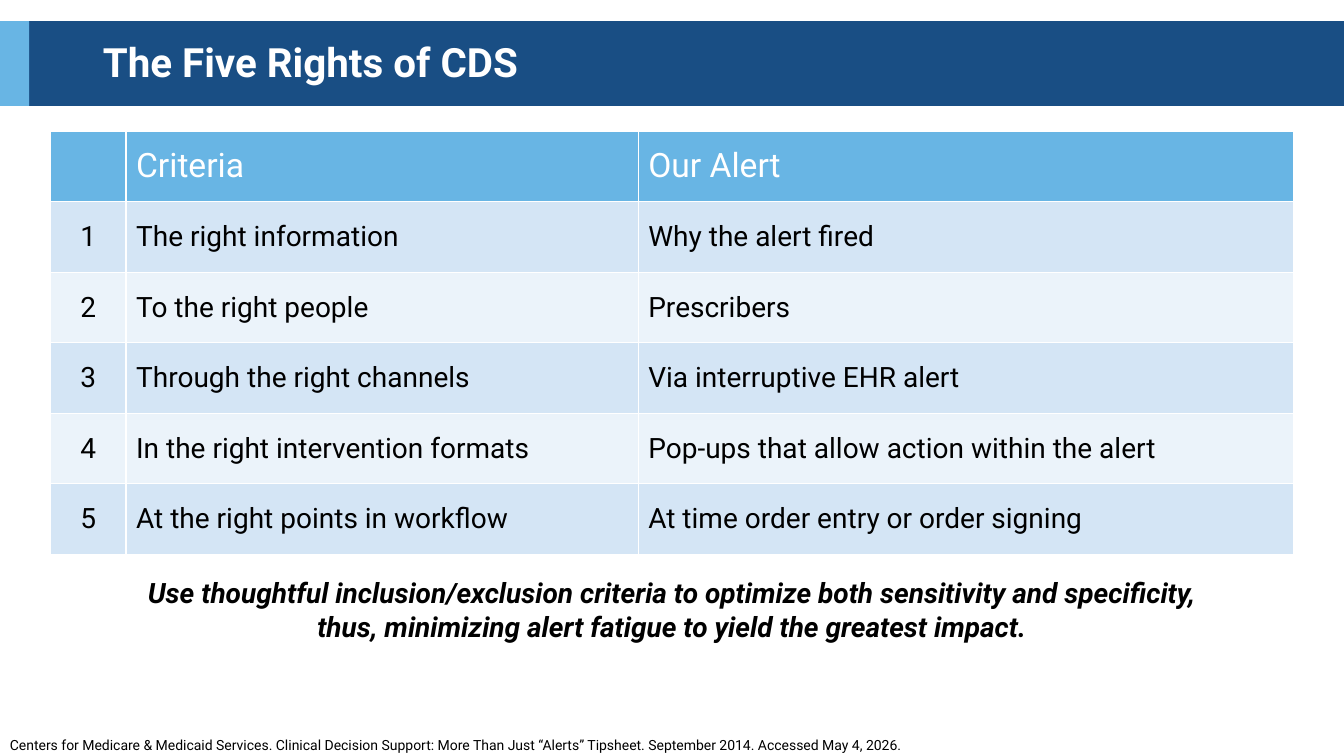
from pptx import Presentation
from pptx import util as u
from pptx.dml.color import RGBColor
from pptx.enum import shapes, text

HEADING = "The Five Rights of CDS"
COLUMN_HEADS = ("", "Criteria", "Our Alert")
RIGHTS = (
    ("The right information", "Why the alert fired"),
    ("To the right people", "Prescribers"),
    ("Through the right channels", "Via interruptive EHR alert"),
    ("In the right intervention formats", "Pop-ups that allow action within the alert"),
    ("At the right points in workflow", "At time order entry or order signing"),
)
TAKEAWAY = (
    "Use thoughtful inclusion/exclusion criteria to optimize both sensitivity and specificity,",
    "thus, minimizing alert fatigue to yield the greatest impact.",
)
CITATION = (
    "Centers for Medicare & Medicaid Services. Clinical Decision Support: "
    "More Than Just “Alerts” Tipsheet. September 2014. Accessed May 4, 2026."
)

NAVY = RGBColor(0x19, 0x4E, 0x84)
SKY = RGBColor(0x68, 0xB5, 0xE4)
BANDS = (RGBColor(0xD4, 0xE5, 0xF5), RGBColor(0xEB, 0xF3, 0xFA))
WHITE = RGBColor(0xFF, 0xFF, 0xFF)
BLACK = RGBColor(0, 0, 0)
FONT = "Roboto"

WIDTH, HEIGHT = 13.33, 7.5
BAND_TOP, BAND_HEIGHT, ACCENT_WIDTH = 0.21, 0.84, 0.29
GRID_LEFT, GRID_TOP, ROW = 0.5, 1.3, 0.7
COLUMNS = (0.75, 5.08, 6.5)
ALERT_LEFT = GRID_LEFT + sum(COLUMNS[:2])

deck = Presentation()
deck.slide_width, deck.slide_height = u.Inches(WIDTH), u.Inches(HEIGHT)
slide = deck.slides.add_slide(deck.slide_layouts[5])


def box(*lengths):
    return [u.Inches(length) for length in lengths]


def style(frame, size, color, align=text.PP_ALIGN.LEFT, bold=False, italic=False):
    for paragraph in frame.paragraphs:
        paragraph.alignment = align
        for run in paragraph.runs:
            font = run.font
            font.name, font.size, font.color.rgb = FONT, u.Pt(size), color
            font.bold, font.italic = bold, italic


def add_bar(width, color):
    bar = slide.shapes.add_shape(
        shapes.MSO_SHAPE.RECTANGLE, *box(0, BAND_TOP, width, BAND_HEIGHT))
    bar.shadow.inherit = False
    bar.fill.solid()
    bar.fill.fore_color.rgb = color
    bar.line.fill.background()


def add_grid(left, top, widths, rows, header=False):
    grid = slide.shapes.add_table(
        rows, len(widths), *box(left, top, sum(widths), ROW * rows)).table
    grid.first_row, grid.horz_banding = header, False
    for column, width in zip(grid.columns, widths):
        column.width = u.Inches(width)
    for row in grid.rows:
        row.height = u.Inches(ROW)
    return grid


def fill_cell(cell, words, fill, size=20, color=BLACK, align=text.PP_ALIGN.LEFT):
    cell.fill.solid()
    cell.fill.fore_color.rgb = fill
    cell.vertical_anchor = text.MSO_ANCHOR.MIDDLE
    if words:
        cell.text_frame.text = words
        style(cell.text_frame, size, color, align)


add_bar(WIDTH, NAVY)
add_bar(ACCENT_WIDTH, SKY)

heading = slide.shapes.title
slide.shapes._spTree.append(heading._element)
heading.left, heading.top, heading.width, heading.height = box(0.92, 0.4, 11.19, 0.48)
heading.text_frame.text = HEADING
heading.text_frame.auto_size = text.MSO_AUTO_SIZE.NONE
heading.text_frame.vertical_anchor = text.MSO_ANCHOR.MIDDLE
heading.text_frame.paragraphs[0].line_spacing = 0.9
style(heading.text_frame, 28.8, WHITE, bold=True)

criteria = add_grid(GRID_LEFT, GRID_TOP, COLUMNS, len(RIGHTS) + 1, header=True)
for column, head in enumerate(COLUMN_HEADS):
    fill_cell(criteria.cell(0, column), head, SKY, 24, WHITE)

for number, (right, alert) in enumerate(RIGHTS, 1):
    band = BANDS[(number - 1) % 2]
    fill_cell(criteria.cell(number, 0), str(number), band, align=text.PP_ALIGN.CENTER)
    fill_cell(criteria.cell(number, 1), right, band)
    fill_cell(criteria.cell(number, 2), "", band)
    answer = add_grid(ALERT_LEFT, GRID_TOP + ROW * number, COLUMNS[2:], 1)
    fill_cell(answer.cell(0, 0), alert, band)

takeaway = slide.shapes.add_textbox(*box(1.29, 5.71, 10.75, 1)).text_frame
takeaway.margin_left = takeaway.margin_right = 0
takeaway.margin_top = takeaway.margin_bottom = 0
takeaway.word_wrap = False
takeaway.text = "\n".join(TAKEAWAY)
style(takeaway, 20, BLACK, text.PP_ALIGN.CENTER, bold=True, italic=True)

citation = slide.shapes.add_textbox(*box(0, 7.26, 12.34, 0.27)).text_frame
citation.word_wrap = True
citation.auto_size = text.MSO_AUTO_SIZE.SHAPE_TO_FIT_TEXT
citation.text = CITATION
style(citation, 10, BLACK)

deck.save("out.pptx")
